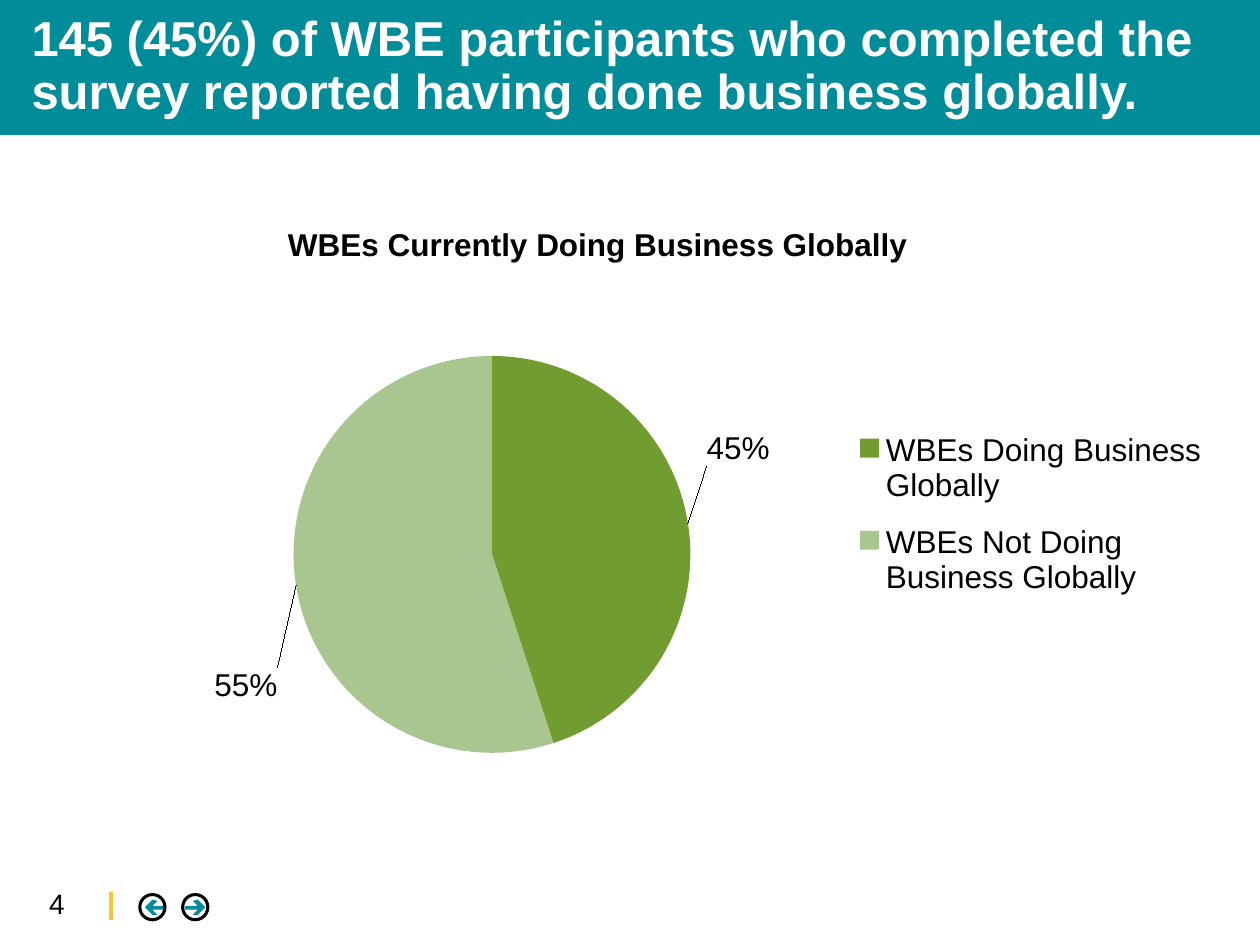
"""Survey slide with a pie chart of WBEs doing business globally."""
from copy import deepcopy
from lxml.etree import SubElement
from pptx import Presentation
from pptx.chart.data import CategoryChartData
from pptx.dml.color import RGBColor
from pptx.enum.chart import XL_CHART_TYPE as CHART, XL_LABEL_POSITION as LABEL, XL_LEGEND_POSITION as LEGEND
from pptx.enum.shapes import MSO_CONNECTOR as CONNECTOR, MSO_SHAPE as SHAPE
from pptx.enum.text import MSO_ANCHOR as ANCHOR
from pptx.oxml import parse_xml
from pptx.oxml.ns import nsdecls, qn
from pptx.util import Inches, Pt

TEAL = RGBColor(0x00, 0x8C, 0x99)
YELLOW = RGBColor(0xFE, 0xC2, 0x32)
GREEN = RGBColor(0x71, 0x9D, 0x30)
PALE_GREEN = RGBColor(0xA9, 0xC6, 0x90)
BLACK = RGBColor(0, 0, 0)
WHITE = RGBColor(0xFF, 0xFF, 0xFF)


def add_text(slide, box, words, size, color, bold=False):
    frame = slide.shapes.add_textbox(*map(Inches, box)).text_frame
    frame.word_wrap = True
    frame.margin_left = frame.margin_right = frame.margin_top = frame.margin_bottom = 0
    run = frame.paragraphs[0].add_run()
    run.text = words
    run.font.name, run.font.size, run.font.bold = "Arial", Pt(size), bold
    run.font.color.rgb = color
    return frame


def place_after(anchor, **settings):
    for old in anchor.getparent().findall(qn("c:layout")):
        anchor.getparent().remove(old)
    values = "".join(f'<c:{key} val="{value}"/>' for key, value in settings.items())
    anchor.addnext(parse_xml(
        f'<c:layout {nsdecls("c")}><c:manualLayout>{values}</c:manualLayout></c:layout>'))


prs = Presentation()
prs.slide_width, prs.slide_height = Inches(10), Inches(7.5)
slide = prs.slides.add_slide(prs.slide_layouts[6])
shapes = slide.shapes

add_text(slide, (0.39, 7.04, 0.54, 0.27), "4", 16, BLACK)
divider = shapes.add_connector(CONNECTOR.STRAIGHT, Inches(0.88), Inches(7.08), Inches(0.88), Inches(7.3))
divider.line.color.rgb, divider.line.width = YELLOW, Pt(2)
SubElement(divider._element.spPr, qn("a:effectLst"))

ARROW = [(0, 7.19), (0.1, 7.19), (0.06, 7.15), (0.1, 7.14), (0.16, 7.2),
         (0.1, 7.26), (0.06, 7.26), (0.1, 7.22), (0, 7.22)]
for tail, direction, ring_left in ((1.47, 1, 1.45), (1.31, -1, 1.11)):
    points = [(Inches(tail + direction * x), Inches(y)) for x, y in ARROW]
    builder = shapes.build_freeform(*points[0])
    builder.add_line_segments(points[1:], close=True)
    arrow = builder.convert_to_shape()
    arrow.shadow.inherit = False
    arrow.fill.solid()
    arrow.fill.fore_color.rgb = TEAL
    arrow.line.fill.background()
    ring = shapes.add_shape(SHAPE.OVAL, Inches(ring_left), Inches(7.1), Inches(0.2), Inches(0.2))
    ring.shadow.inherit = False
    ring.fill.background()
    ring.line.color.rgb, ring.line.width = BLACK, Pt(1.75)

for top, height in ((0, 0.89), (0.87, 0.2)):
    band = shapes.add_shape(SHAPE.RECTANGLE, 0, Inches(top), Inches(10), Inches(height))
    band.shadow.inherit = False
    band.fill.solid()
    band.fill.fore_color.rgb = TEAL
    band.line.fill.background()
band.line.color.rgb, band.line.width = TEAL, Pt(0.75)

headline = add_text(
    slide, (0.25, 0, 9.75, 1.07),
    "145 (45%) of WBE participants who completed the survey reported having done business globally.",
    28, WHITE, bold=True)
headline.vertical_anchor = ANCHOR.MIDDLE
headline.paragraphs[0].line_spacing = 0.9

survey = CategoryChartData()
survey.categories = ["WBEs Doing Business Globally", "WBEs Not Doing Business Globally"]
survey.add_series("Series 1", (45, 55))
chart = shapes.add_chart(CHART.PIE, Inches(0.8), Inches(1.48), Inches(9), Inches(4.95), survey).chart
chart.font.name, chart.font.size, chart.font.color.rgb = "Arial", Pt(11), BLACK

chart.has_title = True
heading = chart.chart_title.text_frame.paragraphs[0].add_run()
heading.text = "WBEs Currently Doing Business Globally"
heading.font.name, heading.font.size, heading.font.bold = "Arial", Pt(18), True
heading.font.color.rgb = BLACK
place_after(chart.chart_title._element.find(qn("c:tx")), xMode="edge", yMode="edge", x=0.16, y=0.05)

chart.has_legend = True
legend = chart.legend
legend.position, legend.include_in_layout = LEGEND.RIGHT, False
legend.font.name, legend.font.size, legend.font.color.rgb = "Arial", Pt(18), BLACK
place_after(legend._element.find(qn("c:legendPos")),
            xMode="edge", yMode="edge", x=0.66, y=0.36, w=0.32, h=0.33)

pie = chart.plots[0]
pie.vary_by_categories = True
place_after(pie._element, layoutTarget="inner", xMode="edge", yMode="edge", x=0.17, y=0.26, w=0.35, h=0.66)
plot_area = pie._element.getparent()
plot_area.insert(0, plot_area.find(qn("c:layout")))

answers = pie.series[0]
labels = answers.data_labels
labels.show_percentage, labels.show_value = True, False
labels.number_format, labels.number_format_is_linked = "0%", False
labels.position = LABEL.OUTSIDE_END
labels.font.name, labels.font.size, labels.font.color.rgb = "Arial", Pt(18), BLACK
label_style = [labels._element.find(qn(tag)) for tag in ("c:numFmt", "c:txPr")]

for index, (color, dx, dy) in enumerate(((GREEN, 0.01, -0.09), (PALE_GREEN, -0.01, 0.13))):
    piece = answers.points[index]
    piece.format.fill.solid()
    piece.format.fill.fore_color.rgb = color
    piece.format.line.fill.background()
    label = parse_xml(
        f'<c:dLbl {nsdecls("c")}><c:idx val="{index}"/><c:dLblPos val="outEnd"/><c:showLegendKey val="0"/>'
        '<c:showVal val="0"/><c:showCatName val="0"/><c:showSerName val="0"/>'
        '<c:showPercent val="1"/><c:showBubbleSize val="0"/></c:dLbl>')
    for style in label_style:
        label.find(qn("c:dLblPos")).addprevious(deepcopy(style))
    place_after(label.find(qn("c:idx")), x=dx, y=dy)
    labels._element.insert(index, label)

prs.save("out.pptx")
